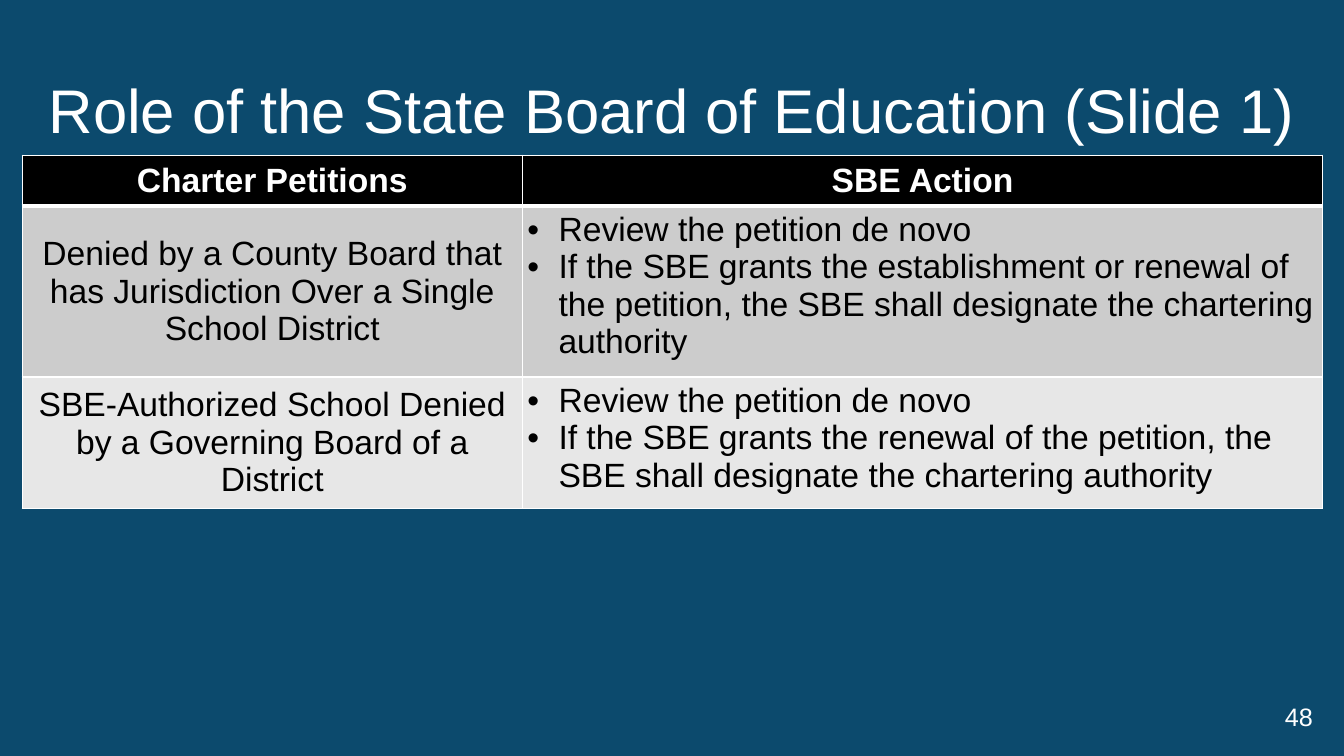
from lxml.etree import SubElement
from pptx import Presentation
from pptx.dml.color import RGBColor as RGB
from pptx.enum.text import MSO_ANCHOR as ANCHOR, PP_ALIGN as ALIGN
from pptx.oxml.ns import qn
from pptx.util import Inches, Pt

COLORS = {
    "background": "0C4A6D",
    "white": "FFFFFF",
    "black": "000000",
    "band_dark": "CCCCCC",
    "band_light": "E7E7E7",
}
HEADERS = ["Charter Petitions", "SBE Action"]
PETITIONS = [
    (
        "Denied by a County Board that has Jurisdiction Over a Single School District",
        [
            "Review the petition de novo",
            "If the SBE grants the establishment or renewal of the petition, "
            "the SBE shall designate the chartering authority",
        ],
    ),
    (
        "SBE-Authorized School Denied by a Governing Board of a District",
        [
            "Review the petition de novo",
            "If the SBE grants the renewal of the petition, "
            "the SBE shall designate the chartering authority",
        ],
    ),
]


class SlideBuilder:
    """Holds the slide and its style, and adds each kind of element."""

    font = "Arial"

    def __init__(self, slide):
        self.s = slide

    def color(self, name):
        return RGB.from_string(COLORS[name])

    def background(self, name):
        fill = self.s.background.fill
        fill.solid()
        fill.fore_color.rgb = self.color(name)

    def style(self, p, size, color, align, bold=False):
        p.alignment = align
        for r in p.runs:
            r.font.name = self.font
            r.font.size = Pt(size)
            r.font.bold = bold
            r.font.color.rgb = self.color(color)

    def text(self, text, box, size, align, spacing=1.0):
        sp = self.s.shapes.add_textbox(*map(Inches, box))
        tf = sp.text_frame
        tf.word_wrap = True
        tf.vertical_anchor = ANCHOR.MIDDLE
        tf.text = text
        p = tf.paragraphs[0]
        p.line_spacing = spacing
        self.style(p, size, "white", align)

    def bullet(self, p):
        pPr = p._p.get_or_add_pPr()
        pPr.set("marL", str(Inches(0.31)))
        pPr.set("indent", str(-Inches(0.31)))
        SubElement(pPr, qn("a:buFont"), typeface=self.font)
        SubElement(pPr, qn("a:buChar"), char="•")

    def borders(self, cell, top, bottom):
        tcPr = cell._tc.get_or_add_tcPr()
        for side, width in zip("LRTB", (1, 1, top, bottom)):
            ln = SubElement(tcPr, qn(f"a:ln{side}"), w=str(Pt(width)))
            fill = SubElement(ln, qn("a:solidFill"))
            SubElement(fill, qn("a:srgbClr"), val=COLORS["white"])

    def cell(self, cell, lines, fill, color="black", bold=False,
             bullets=False, top=1, bottom=1):
        self.borders(cell, top, bottom)
        cell.fill.solid()
        cell.fill.fore_color.rgb = self.color(fill)
        cell.margin_left = cell.margin_right = Inches(0.05)
        cell.margin_top = cell.margin_bottom = Inches(0.05)
        cell.vertical_anchor = ANCHOR.TOP if bullets else ANCHOR.MIDDLE
        tf = cell.text_frame
        tf.text = "\n".join(lines)
        for p in tf.paragraphs:
            if bullets:
                self.bullet(p)
            self.style(p, 24, color, ALIGN.LEFT if bullets else ALIGN.CENTER, bold)

    def table(self, box, widths, heights, headers, rows):
        table = self.s.shapes.add_table(
            len(heights), len(widths), *map(Inches, box)).table
        table.horz_banding = False
        for col, width in zip(table.columns, widths):
            col.width = Inches(width)
        for row, height in zip(table.rows, heights):
            row.height = Inches(height)
        for i, header in enumerate(headers):
            self.cell(table.cell(0, i), [header], "black", "white",
                      bold=True, bottom=3)
        for i, (petition, actions) in enumerate(rows, start=1):
            fill = "band_dark" if i % 2 else "band_light"
            top = 3 if i == 1 else 1
            self.cell(table.cell(i, 0), [petition], fill, top=top)
            self.cell(table.cell(i, 1), actions, fill, bullets=True, top=top)


def main():
    prs = Presentation()
    prs.slide_width, prs.slide_height = Inches(13.33), Inches(7.5)
    b = SlideBuilder(prs.slides.add_slide(prs.slide_layouts[6]))
    b.background("background")
    b.text("Role of the State Board of Education (Slide 1)",
           (0.22, 0.4, 12.9, 1.45), 44, ALIGN.CENTER, spacing=0.9)
    b.table((0.22, 1.54, 12.9, 2.65), (4.96, 7.94), (0.45, 1.1, 1.1),
            HEADERS, PETITIONS)
    b.text("48", (12.56, 6.91, 0.56, 0.4), 18, ALIGN.RIGHT)
    prs.save("out.pptx")


if __name__ == "__main__":
    main()
